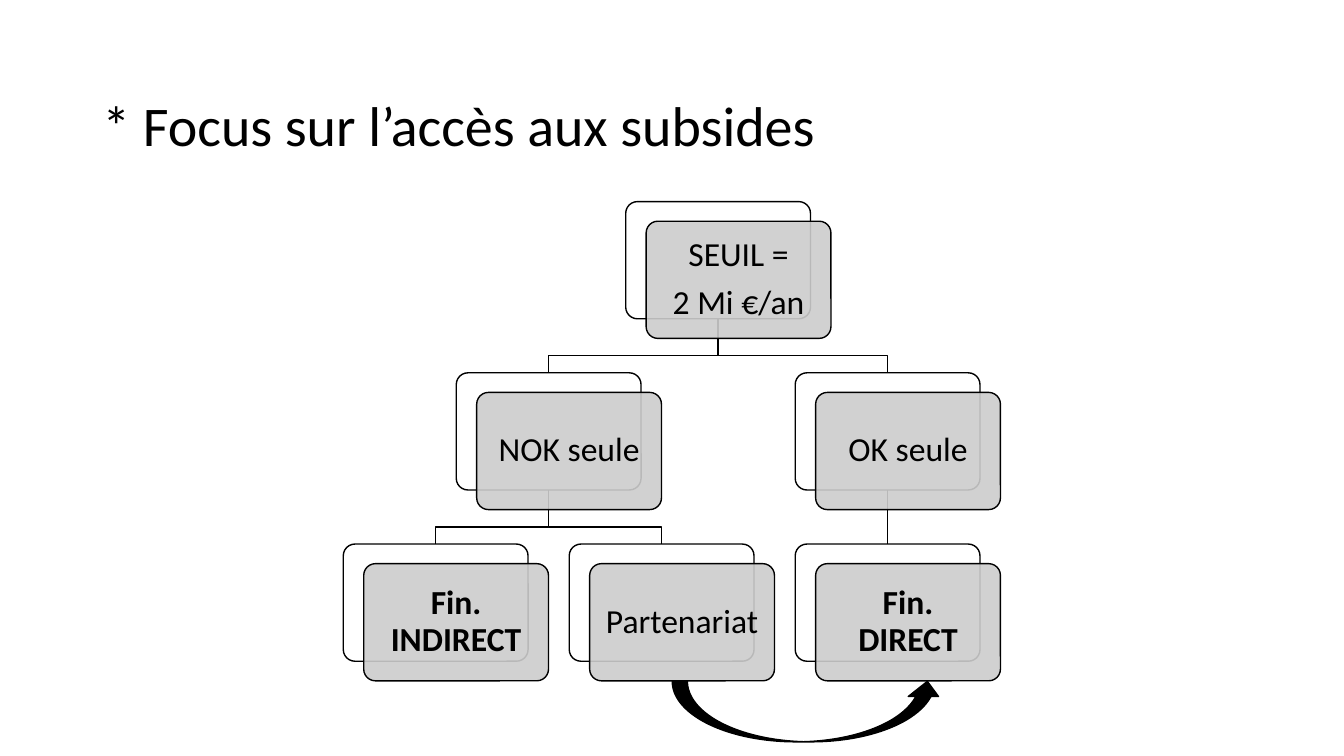
from pptx import Presentation
from pptx.dml.color import RGBColor
from pptx.enum.shapes import MSO_CONNECTOR as LINK, MSO_SHAPE as SHAPE
from pptx.enum.text import MSO_ANCHOR as ANCHOR, PP_ALIGN as ALIGN
from pptx.oxml.ns import qn
from pptx.util import Pt
from lxml.etree import SubElement


def paint(shape, fill=None):
    """Set a black outline, no shadow, and the given fill or none."""
    shape.shadow.inherit = False
    shape.line.color.rgb = RGBColor.from_string("000000")
    shape.line.width = Pt(1)
    if fill:
        shape.fill.solid()
        shape.fill.fore_color.rgb = RGBColor.from_string(fill)
    else:
        shape.fill.background()


def write(shape, lines, size, align, bold=False):
    frame = shape.text_frame
    frame.word_wrap = True
    frame.vertical_anchor = ANCHOR.MIDDLE
    frame.text = lines
    for para in frame.paragraphs:
        para.alignment = align
        para.line_spacing = 0.9
        look = {"name": "Calibri", "size": Pt(size), "bold": bold}
        for key, value in look.items():
            setattr(para.runs[0].font, key, value)
        para.runs[0].font.color.rgb = RGBColor.from_string("000000")


deck = Presentation()
deck.slide_width, deck.slide_height = Pt(960), Pt(540)
slide = deck.slides.add_slide(deck.slide_layouts[5])
shapes = slide.shapes

title = shapes.title
place = {"left": 66, "top": 39.6, "width": 828, "height": 104.4}
for key, value in place.items():
    setattr(title, key, Pt(value))
write(title, "* Focus sur l’accès aux subsides", 40, ALIGN.LEFT)

# Tree: label, column, row, bold, parent
nodes = [
    ("SEUIL =\n2 Mi €/an", 2.5, 0, False, None),
    ("NOK seule", 1, 1, False, 0),
    ("Fin. INDIRECT", 0, 2, True, 1),
    ("Partenariat", 2, 2, False, 1),
    ("OK seule", 4, 1, False, 0),
    ("Fin. DIRECT", 4, 2, True, 4),
]
WIDE, HIGH = 132, 83.7
spots = [(311.2 + 80.7 * col, 144 + 122.3 * row)
         for _, col, row, _, _ in nodes]

# Branches lie beneath the cards
for (mid, top), node in zip(spots, nodes):
    if node[4] is None:
        continue
    start, base = spots[node[4]]
    base += HIGH
    bend = base + 26.4
    if start == mid:
        link = shapes.add_connector(LINK.STRAIGHT, Pt(mid), Pt(base),
                                    Pt(mid), Pt(top))
        link.line.color.rgb = RGBColor.from_string("000000")
        link.line.width = Pt(1)
        SubElement(link._element.spPr, qn("a:effectLst"))
    else:
        path = shapes.build_freeform(Pt(start), Pt(base))
        turns = [(start, bend), (mid, bend), (mid, top)]
        path.add_line_segments([(Pt(x), Pt(y)) for x, y in turns], close=False)
        paint(path.convert_to_shape())

# Each card is a white back and a translucent grey front
for (mid, top), (label, _, _, bold, _) in zip(spots, nodes):
    for right, down, fill in [(0, 0, "FFFFFF"), (14.6, 14, "CCCCCC")]:
        card = shapes.add_shape(SHAPE.ROUNDED_RECTANGLE,
                                Pt(mid - WIDE / 2 + right), Pt(top + down),
                                Pt(WIDE), Pt(HIGH))
        card.adjustments[0] = 0.1
        paint(card, fill)
    tint = card._element.spPr.find(qn("a:solidFill"))[0]
    SubElement(tint, qn("a:alpha"), val="90000")
    for side in ("left", "right", "top", "bottom"):
        setattr(card.text_frame, "margin_" + side, Pt(8))
    write(card, label, 24, ALIGN.CENTER, bold)
    for para in card.text_frame.paragraphs:
        para.space_after = Pt(8.4)

arrow = shapes.add_shape(SHAPE.CURVED_UP_ARROW, Pt(480.2), Pt(486.7),
                         Pt(193), Pt(43.2))
paint(arrow, "000000")

deck.save("out.pptx")
